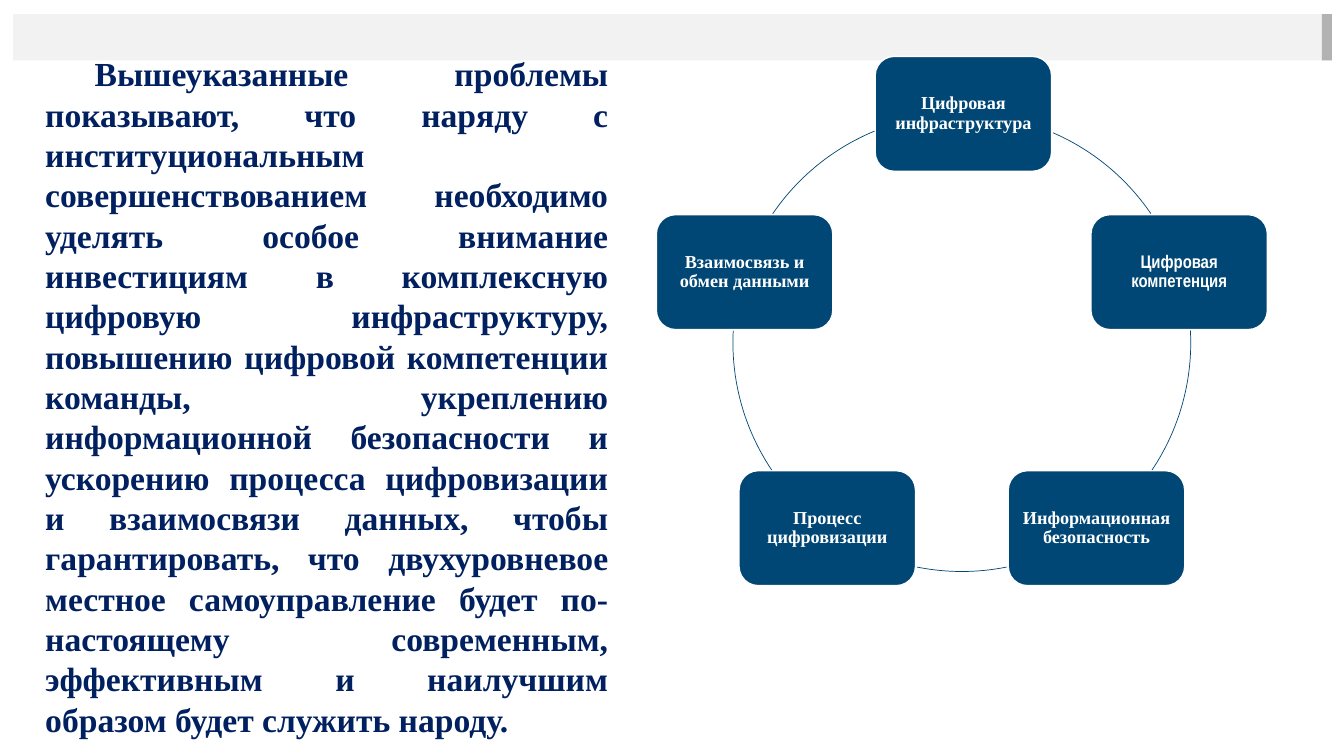
from dataclasses import dataclass
from math import cos, radians, sin

from pptx import Presentation
from pptx.dml.color import RGBColor
from pptx.enum.shapes import MSO_SHAPE as Shape
from pptx.enum.text import MSO_ANCHOR as Anchor, MSO_AUTO_SIZE as AutoSize, PP_ALIGN as Align
from pptx.util import Pt

PX = 9144
WHITE = RGBColor(0xFF, 0xFF, 0xFF)
LIGHT_GREY = RGBColor(0xF2, 0xF2, 0xF2)
GREY = RGBColor(0xB2, 0xB2, 0xB2)
BLUE = RGBColor(0x00, 0x47, 0x75)
NAVY = RGBColor(0x00, 0x20, 0x60)
SERIF = "Times New Roman"
NARROW = "Arial Narrow"

CENTER_X, CENTER_Y, RADIUS = 954, 340, 227
BOX_W, BOX_H, BOX_INSET = 175, 114, 5

STATEMENT = (
    "Вышеуказанные проблемы показывают, что наряду с институциональным "
    "совершенствованием необходимо уделять особое внимание инвестициям в "
    "комплексную цифровую инфраструктуру, повышению цифровой компетенции "
    "команды, укреплению информационной безопасности и ускорению процесса "
    "цифровизации и взаимосвязи данных, чтобы гарантировать, что "
    "двухуровневое местное самоуправление будет по-настоящему современным, "
    "эффективным и наилучшим образом будет служить народу."
)


@dataclass(frozen=True)
class Stage:
    text: str
    arc_start: float
    arc_end: float
    font: str = SERIF
    shift: int = 0


STAGES = [
    Stage("Цифровая инфраструктура", 293.5, 325.7, shift=2),
    Stage("Цифровая компетенция", 357, 33.8, font=NARROW),
    Stage("Информационная безопасность", 78.7, 101.3),
    Stage("Процесс цифровизации", 146.2, 183),
    Stage("Взаимосвязь и обмен данными", 214.3, 247.6),
]


def add_filled(slide, kind: Shape, x: int, y: int, w: int, h: int, color: RGBColor):
    s = slide.shapes.add_shape(kind, x * PX, y * PX, w * PX, h * PX)
    s.shadow.inherit = False
    s.fill.solid()
    s.fill.fore_color.rgb = color
    s.line.fill.background()
    return s


def add_run(p, text: str, font: str, size: int, color: RGBColor) -> None:
    r = p.add_run()
    r.text = text
    r.font.name = font
    r.font.size = Pt(size)
    r.font.bold = True
    r.font.color.rgb = color


def add_stage(slide, stage: Stage, angle: float) -> None:
    x = round(CENTER_X + RADIUS * cos(angle) - BOX_W / 2) + stage.shift
    y = round(CENTER_Y + RADIUS * sin(angle) - BOX_H / 2)
    s = add_filled(slide, Shape.ROUNDED_RECTANGLE, x, y, BOX_W, BOX_H, BLUE)
    s.line.color.rgb = WHITE
    s.line.width = Pt(1)
    tf = s.text_frame
    tf.word_wrap = True
    tf.vertical_anchor = Anchor.MIDDLE
    tf.margin_left = tf.margin_right = BOX_INSET * PX
    tf.margin_top = tf.margin_bottom = BOX_INSET * PX
    p = tf.paragraphs[0]
    p.alignment = Align.CENTER
    p.line_spacing = 0.9
    add_run(p, stage.text, stage.font, 13, WHITE)


def add_arc(slide, start: float, end: float) -> None:
    s = slide.shapes.add_shape(
        Shape.ARC, (CENTER_X - RADIUS) * PX, (CENTER_Y - RADIUS) * PX,
        2 * RADIUS * PX, 2 * RADIUS * PX)
    s.shadow.inherit = False
    s.fill.background()
    s.line.color.rgb = BLUE
    s.line.width = Pt(0.5)
    s.adjustments[0] = start * 0.6
    s.adjustments[1] = end * 0.6


def add_statement(slide) -> None:
    s = slide.shapes.add_textbox(35 * PX, 48 * PX, 578 * PX, 697 * PX)
    tf = s.text_frame
    tf.word_wrap = True
    tf.auto_size = AutoSize.SHAPE_TO_FIT_TEXT
    p = tf.paragraphs[0]
    p.alignment = Align.JUSTIFY
    p._p.get_or_add_pPr().set("indent", str(49 * PX))
    add_run(p, STATEMENT, SERIF, 24, NAVY)


def main() -> None:
    """Build the slide on digital development."""
    prs = Presentation()
    prs.slide_width, prs.slide_height = 1333 * PX, 750 * PX
    slide = prs.slides.add_slide(prs.slide_layouts[6])
    add_filled(slide, Shape.RECTANGLE, 13, 14, 1308, 46, LIGHT_GREY)
    add_filled(slide, Shape.RECTANGLE, 1311, 14, 10, 46, GREY)
    for i, stage in enumerate(STAGES):
        add_stage(slide, stage, radians(i * 360 / len(STAGES) - 90))
        add_arc(slide, stage.arc_start, stage.arc_end)
    add_statement(slide)
    prs.save("out.pptx")


if __name__ == "__main__":
    main()
